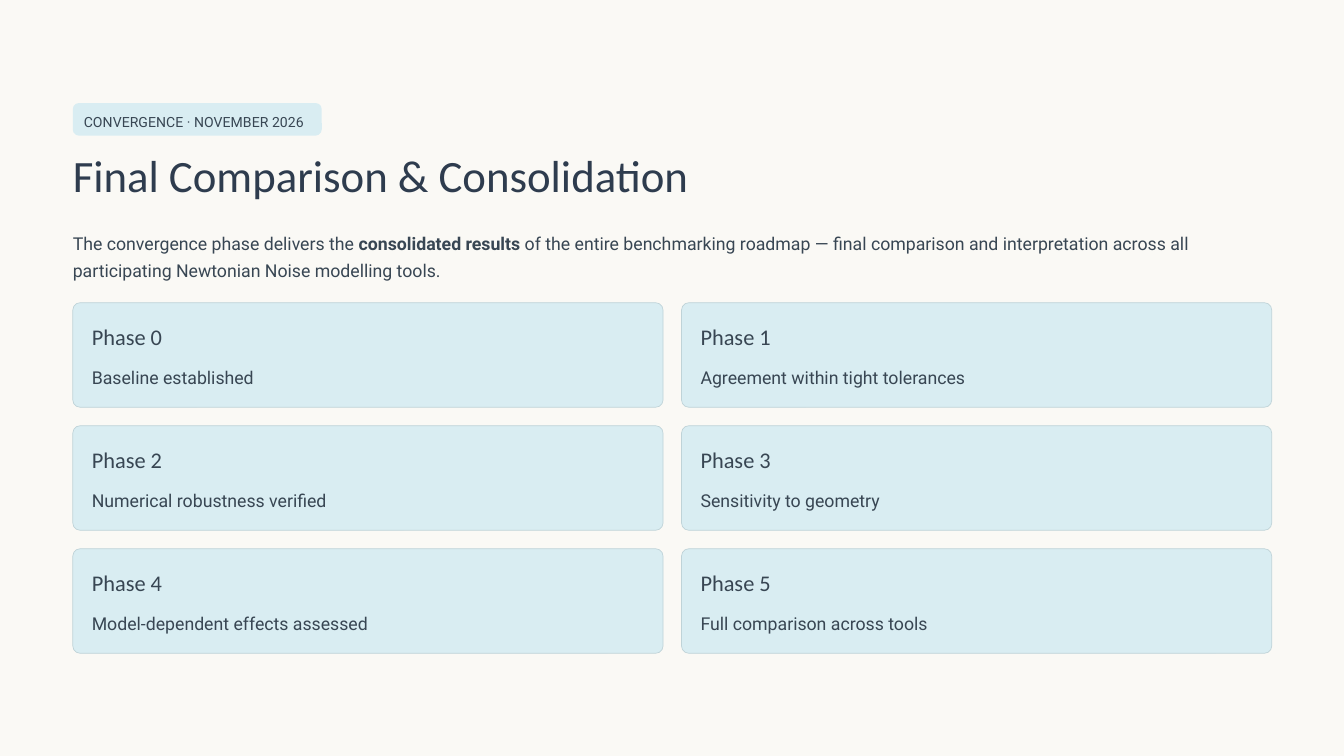
from dataclasses import dataclass

from pptx import Presentation
from pptx.dml.color import RGBColor
from pptx.enum.shapes import MSO_SHAPE
from pptx.enum.text import MSO_ANCHOR, MSO_AUTO_SIZE, PP_ALIGN
from pptx.shapes.autoshape import Shape
from pptx.slide import Slide
from pptx.util import Pt

ROUNDED = MSO_SHAPE.ROUNDED_RECTANGLE
TOP = MSO_ANCHOR.TOP
NO_AUTOFIT = MSO_AUTO_SIZE.NONE
LEFT_ALIGNED = PP_ALIGN.LEFT

CREAM = RGBColor(0xFA, 0xF9, 0xF5)
PALE_BLUE = RGBColor(0xD9, 0xED, 0xF2)
BORDER = RGBColor(0xBF, 0xD3, 0xD8)
TITLE_COLOR = RGBColor(0x2E, 0x3C, 0x4E)
TEXT_COLOR = RGBColor(0x38, 0x46, 0x53)

MARGIN = 39
CARD_TOP = 162.2
CARD_WIDTH, CARD_HEIGHT = 316.2, 56
CARD_GAP = 9.9
CARD_PADDING = 10.2
COLUMNS = 2


@dataclass(frozen=True)
class Box:
    left: float
    top: float
    width: float
    height: float


@dataclass(frozen=True)
class TextStyle:
    font: str
    size: float
    line_spacing: float
    color: RGBColor = TEXT_COLOR


@dataclass(frozen=True)
class Run:
    text: str
    bold: bool = False


@dataclass(frozen=True)
class Phase:
    name: str
    outcome: str


TAG = TextStyle("Roboto", 7.5, 11.5)
TITLE = TextStyle("Calibri", 24, 30.5, TITLE_COLOR)
BODY = TextStyle("Roboto", 9.5, 14.5)
CARD_HEADING = TextStyle("Calibri", 12, 15)

INTRODUCTION = [
    Run("The convergence phase delivers the "),
    Run("consolidated results", bold=True),
    Run(
        " of the entire benchmarking roadmap — final comparison and "
        "interpretation across all participating Newtonian Noise modelling tools."
    ),
]

PHASES = [
    Phase("Phase 0", "Baseline established"),
    Phase("Phase 1", "Agreement within tight tolerances"),
    Phase("Phase 2", "Numerical robustness verified"),
    Phase("Phase 3", "Sensitivity to geometry"),
    Phase("Phase 4", "Model-dependent effects assessed"),
    Phase("Phase 5", "Full comparison across tools"),
]


def place(shape: Shape, box: Box) -> None:
    shape.left, shape.top = Pt(box.left), Pt(box.top)
    shape.width, shape.height = Pt(box.width), Pt(box.height)


def write_text(shape: Shape, runs: list[Run], style: TextStyle, wrap: bool) -> None:
    frame = shape.text_frame
    frame.margin_left = frame.margin_top = frame.margin_right = frame.margin_bottom = 0
    frame.word_wrap = wrap
    frame.auto_size = NO_AUTOFIT
    frame.vertical_anchor = TOP
    paragraph = frame.paragraphs[0]
    paragraph.alignment = LEFT_ALIGNED
    paragraph.line_spacing = Pt(style.line_spacing)
    paragraph.font.name = style.font
    paragraph.font.size = Pt(style.size)
    paragraph.font.color.rgb = style.color
    for part in runs:
        run = paragraph.add_run()
        run.text = part.text
        if part.bold:
            run.font.bold = True


def add_text(
    slide: Slide, box: Box, runs: list[Run], style: TextStyle, wrap: bool = False
) -> None:
    shape = slide.shapes.add_textbox(0, 0, 0, 0)
    place(shape, box)
    write_text(shape, runs, style, wrap)


def add_panel(slide: Slide, box: Box, rounding: float, outlined: bool) -> None:
    shape = slide.shapes.add_shape(ROUNDED, 0, 0, 0, 0)
    place(shape, box)
    shape.adjustments[0] = rounding
    shape.shadow.inherit = False
    shape.fill.solid()
    shape.fill.fore_color.rgb = PALE_BLUE
    if outlined:
        shape.line.color.rgb = BORDER
        shape.line.width = Pt(0.38)
    else:
        shape.line.fill.background()


def add_phase_card(slide: Slide, index: int, phase: Phase) -> None:
    row, column = divmod(index, COLUMNS)
    left = MARGIN + column * (CARD_WIDTH + CARD_GAP)
    top = CARD_TOP + row * (CARD_HEIGHT + CARD_GAP)
    add_panel(slide, Box(left, top, CARD_WIDTH, CARD_HEIGHT), 0.07, outlined=True)
    text_left = left + CARD_PADDING
    text_top = top + CARD_PADDING
    add_text(
        slide, Box(text_left, text_top, 122.4, 15), [Run(phase.name)], CARD_HEADING
    )
    add_text(
        slide,
        Box(text_left, text_top + 21.1, CARD_WIDTH - 2 * CARD_PADDING, 14.5),
        [Run(phase.outcome)],
        BODY,
        wrap=True,
    )


def main() -> None:
    presentation = Presentation()
    presentation.slide_width, presentation.slide_height = Pt(720), Pt(405)
    slide = presentation.slides.add_slide(
        presentation.slide_layouts.get_by_name("Title Only")
    )
    slide.background.fill.solid()
    slide.background.fill.fore_color.rgb = CREAM

    add_panel(slide, Box(MARGIN, 55.2, 133.4, 17.5), 0.19, outlined=False)
    add_text(
        slide, Box(44.9, 58.5, 121.7, 11.5), [Run("CONVERGENCE · NOVEMBER 2026")], TAG
    )
    title = slide.shapes.title
    place(title, Box(MARGIN, 77.2, 376.6, 30.5))
    write_text(title, [Run("Final Comparison & Consolidation")], TITLE, wrap=False)
    add_text(slide, Box(MARGIN, 121.8, 641.5, 29.5), INTRODUCTION, BODY, wrap=True)

    for index, phase in enumerate(PHASES):
        add_phase_card(slide, index, phase)

    presentation.save("out.pptx")


if __name__ == "__main__":
    main()
